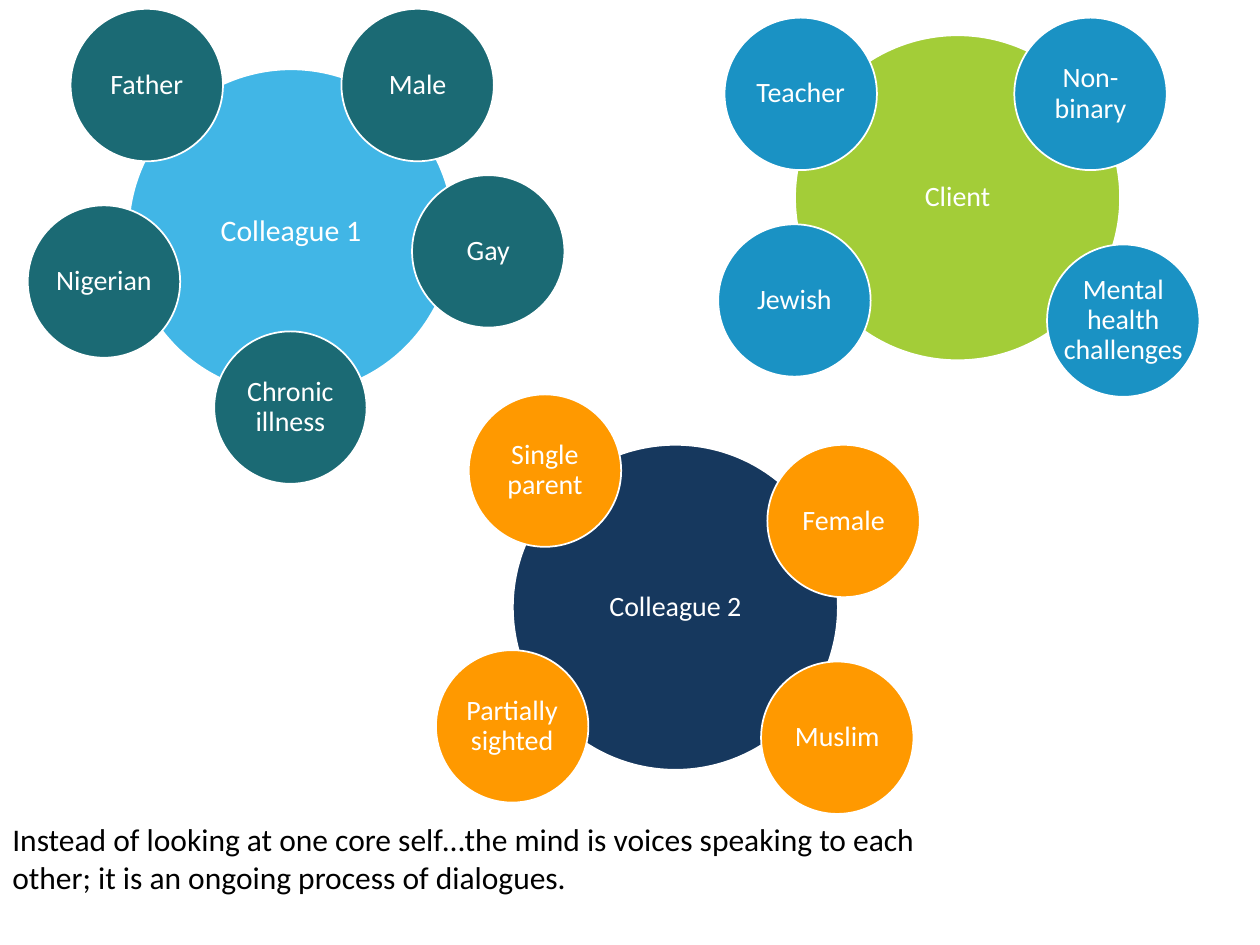
"""Build a slide of three selves, each ringed by its voices."""
from pptx import Presentation
from pptx.dml.color import RGBColor
from pptx.enum import shapes, text
from pptx.util import Inches, Pt


def color(fmt, code):
    fmt.rgb = RGBColor.from_string(code)


def write(shape, words, size=16, ink="FFFFFF", align=text.PP_ALIGN.CENTER,
          anchor=text.MSO_ANCHOR.MIDDLE, space=0.9, inset=None):
    frame = shape.text_frame
    frame.word_wrap = True
    frame.vertical_anchor = anchor
    if inset is not None:
        frame.margin_left = frame.margin_right = Inches(inset)
        frame.margin_top = frame.margin_bottom = 0
    para = frame.paragraphs[0]
    para.text = words
    para.alignment = align
    para.line_spacing = space
    para.font.size = Pt(size)
    para.font.name = "Calibri"
    color(para.font.color, ink)


deck = Presentation()
deck.slide_width, deck.slide_height = Inches(10), Inches(7.5)
slide = deck.slides.add_slide(deck.slide_layouts[6])

note = slide.shapes.add_textbox(Inches(0), Inches(6.46), Inches(7.37), Inches(0.71))
write(note, "Instead of looking at one core self…the mind is voices speaking to each "
      "other; it is an ongoing process of dialogues.", size=18, ink="000000",
      align=text.PP_ALIGN.LEFT, anchor=text.MSO_ANCHOR.TOP, space=1.0)

CORE, VOICE = 2.58, 1.21
groups = [
    ("Colleague 1", 1.02, 0.55, 17, "41B6E6", "1B6A74", [
        ("Father", 0.56, 0.07), ("Male", 2.71, 0.07), ("Gay", 3.27, 1.39),
        ("Nigerian", 0.22, 1.63), ("Chronic illness", 1.7, 2.63)]),
    ("Colleague 2", 4.07, 3.53, 16, "16385E", "FF9900", [
        ("Partially sighted", 3.46, 5.16), ("Female", 6.09, 3.53),
        ("Muslim", 6.04, 5.25), ("Single parent", 3.72, 3.13)]),
    ("Client", 6.31, 0.28, 16, "A3CD38", "1A92C4", [
        ("Teacher", 5.75, 0.14), ("Non-binary", 8.05, 0.14),
        ("Mental health challenges", 8.31, 1.94), ("Jewish", 5.7, 1.78)]),
]

for name, left, top, size, main, tint, voices in groups:
    discs = [(name, left, top, CORE, size, main)]
    discs += [(word, x, y, VOICE, 16, tint) for word, x, y in voices]
    for word, x, y, width, points, fill in discs:
        disc = slide.shapes.add_shape(shapes.MSO_SHAPE.OVAL, Inches(x), Inches(y),
                                      Inches(width), Inches(width))
        disc.shadow.inherit = False
        disc.fill.solid()
        color(disc.fill.fore_color, fill)
        color(disc.line.color, "FFFFFF")
        disc.line.width = Pt(1)
        write(disc, word, size=points, inset=-0.06 if "challenges" in word else 0.02)

deck.save("out.pptx")
